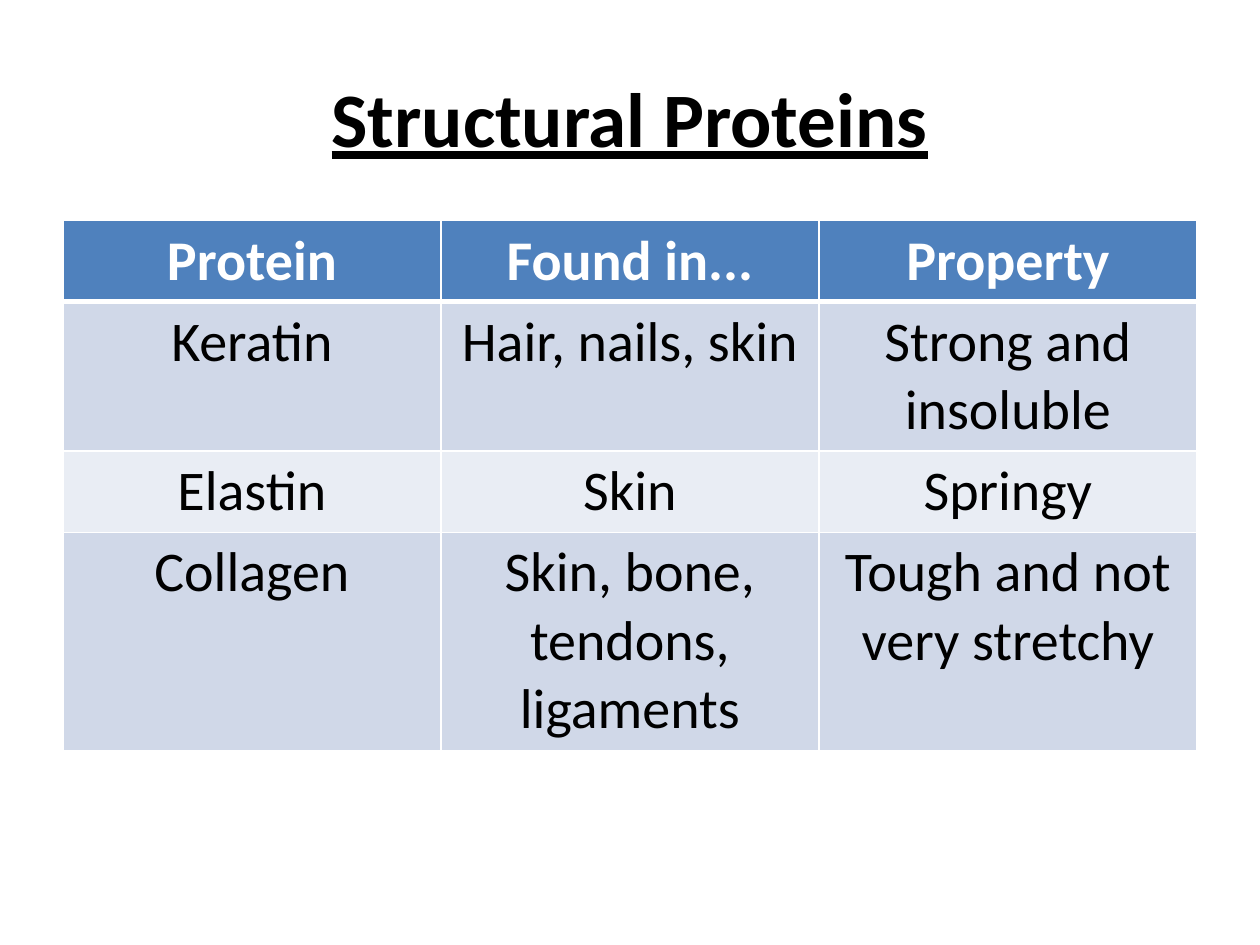
import pptx
import pptx.dml.color
import pptx.enum.text
import pptx.oxml.ns
import pptx.util
from lxml import etree

ROWS = [
    ["Protein", "Found in...", "Property"],
    ["Keratin", "Hair, nails, skin", "Strong and insoluble"],
    ["Elastin", "Skin", "Springy"],
    ["Collagen", "Skin, bone, tendons, ligaments", "Tough and not very stretchy"],
]
LINES_PER_ROW = [1, 2, 1, 3]


def color(value):
    """Turn a hex string into a colour."""
    return pptx.dml.color.RGBColor.from_string(value)


def write(frame, text, size, font="Calibri", ink="000000", bold=False, underline=False):
    """Write one centred paragraph in a text frame."""
    para = frame.paragraphs[0]
    para.alignment = pptx.enum.text.PP_ALIGN.CENTER
    span = para.add_run()
    span.text = text
    span.font.name = font
    span.font.size = pptx.util.Pt(size)
    span.font.bold = bold
    span.font.underline = underline
    span.font.color.rgb = color(ink)


def draw_border(cell, side, width, ink="FFFFFF"):
    """Add a solid border to one side of a cell."""
    properties = cell._tc.get_or_add_tcPr()
    name = pptx.oxml.ns.qn
    line = etree.SubElement(properties, name(f"a:ln{side}"), w=str(pptx.util.Pt(width)))
    fill = etree.SubElement(line, name("a:solidFill"))
    etree.SubElement(fill, name("a:srgbClr"), val=ink)


class ProteinSlide:
    """Hold the style and the current slide."""

    header_fill = "4F81BD"
    band_fills = ["E9EDF4", "D0D8E8"]
    left, width = 0.05, 0.9
    line_height, cell_padding = 0.54, 0.1

    def __init__(self, deck):
        """Add a title-only page to the deck."""
        self.deck = deck
        self.page = deck.slides.add_slide(deck.slide_layouts[5])

    def area(self, top, height):
        """Give a full-width area from shares of the slide height."""
        wide, high = self.deck.slide_width, self.deck.slide_height
        return [int(n) for n in (self.left * wide, top * high, self.width * wide, height * high)]

    def title(self, text, top, height):
        """Place and write the title."""
        box = self.page.shapes.title
        box.left, box.top, box.width, box.height = self.area(top, height)
        box.text_frame.vertical_anchor = pptx.enum.text.MSO_ANCHOR.MIDDLE
        write(box.text_frame, text, size=44, bold=True, underline=True)

    def table(self, rows, line_counts, top):
        """Draw a banded table with rows sized by their line counts."""
        heights = [count * self.line_height + self.cell_padding for count in line_counts]
        share = pptx.util.Inches(sum(heights)) / self.deck.slide_height
        frame = self.page.shapes.add_table(len(rows), len(rows[0]), *self.area(top, share))
        for index, (texts, height) in enumerate(zip(rows, heights)):
            frame.table.rows[index].height = pptx.util.Inches(height)
            for column, text in enumerate(texts):
                self.cell(frame.table.cell(index, column), text, index)

    def cell(self, cell, text, row):
        """Style and write one table cell."""
        header = row == 0
        widths = {"L": 1, "R": 1, "T": 3 if row == 1 else 1, "B": 3 if header else 1}
        for side, width in widths.items():
            draw_border(cell, side, width)
        cell.fill.solid()
        cell.fill.fore_color.rgb = color(self.header_fill if header else self.band_fills[row % 2])
        write(cell.text_frame, text, size=32, bold=header, ink="FFFFFF" if header else "000000")


def main():
    """Build and save the deck."""
    deck = pptx.Presentation()
    deck.slide_width = pptx.util.Inches(10)
    deck.slide_height = pptx.util.Inches(7.5)
    slide = ProteinSlide(deck)
    slide.title("Structural Proteins", top=0.04, height=1 / 6)
    slide.table(ROWS, LINES_PER_ROW, top=7 / 30)
    deck.save("out.pptx")


if __name__ == "__main__":
    main()
